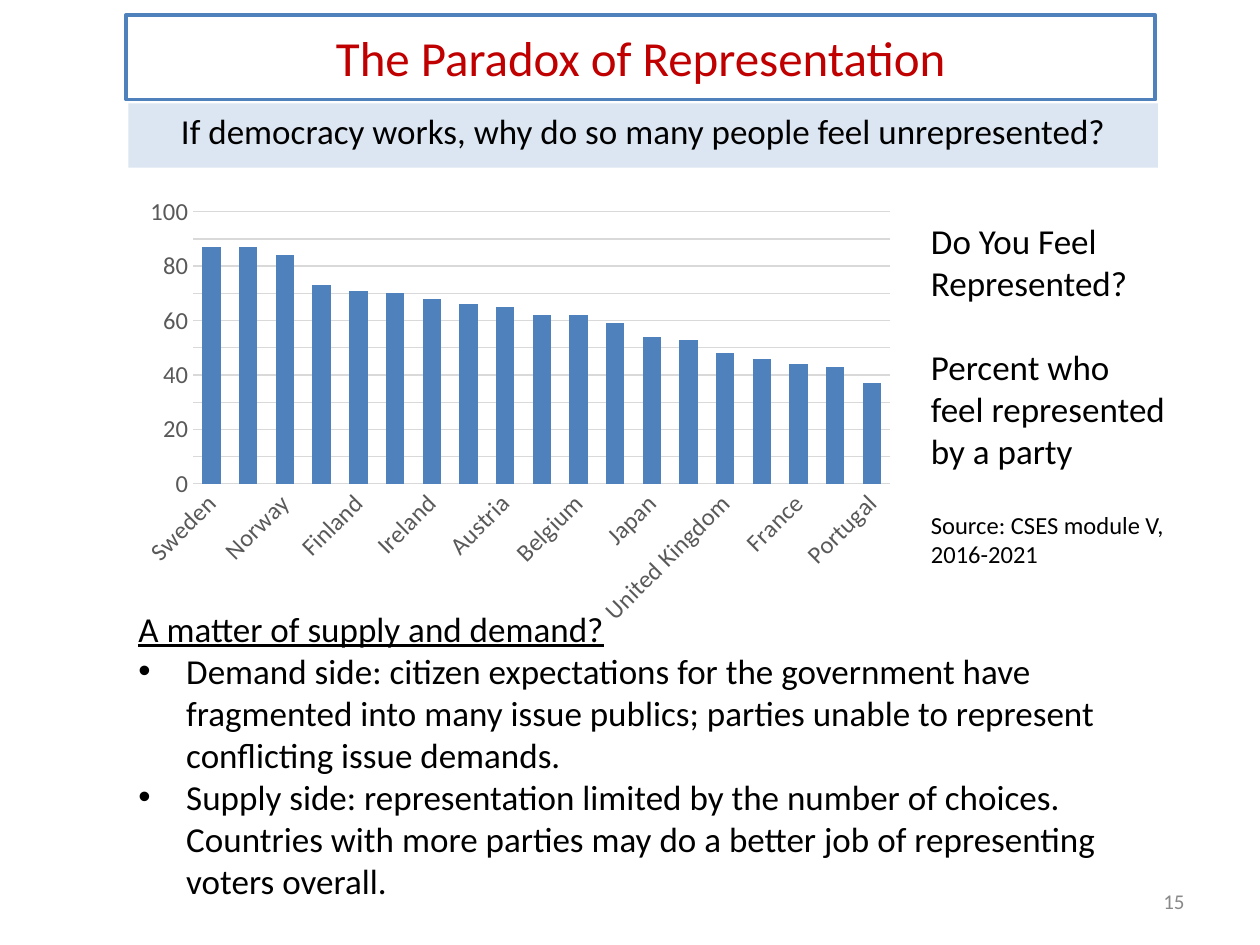
from lxml.etree import SubElement
from pptx import Presentation
from pptx.chart.data import CategoryChartData
from pptx.dml.color import RGBColor
from pptx.enum.chart import XL_CHART_TYPE, XL_TICK_MARK
from pptx.enum.shapes import MSO_SHAPE
from pptx.enum.text import MSO_ANCHOR, PP_ALIGN
from pptx.oxml.ns import qn
from pptx.util import Inches, Pt

# Content
TITLE = "The Paradox of Representation"
QUESTION = "If democracy works, why do so many people feel unrepresented?"
REPRESENTED = [
    ("Sweden", 87), ("New Zealand", 87), ("Norway", 84), ("Denmark", 73),
    ("Finland", 71), ("Canada", 70), ("Ireland", 68), ("Netherlands", 66),
    ("Austria", 65), ("United States", 62), ("Belgium", 62), ("Australia", 59),
    ("Japan", 54), ("Germany", 53), ("United Kingdom", 48), ("Italy", 46),
    ("France", 44), ("Greece", 43), ("Portugal", 37),
]
# Paragraphs: text, size, space before
CAPTION = [
    ("Do You Feel Represented?", 20, 0),
    ("Percent who feel represented by a party", 20, 24),
    ("Source: CSES module V, 2016-2021", 14, 22),
]
DISCUSSION = [
    ("A matter of supply and demand?", 20, 0),
    ("Demand side: citizen expectations for the government have fragmented into many "
     "issue publics; parties unable to represent conflicting issue demands.", 20, 0),
    ("Supply side: representation limited by the number of choices. Countries with more "
     "parties may do a better job of representing voters overall.", 20, 0),
]
PAGE_NUMBER = "15"

COLORS = {"blue": "4F81BD", "pale": "DCE6F2", "red": "C00000", "black": "000000",
          "axis": "595959", "grid": "D9D9D9", "number": "898989"}
FONT = "Calibri"

# Places in inches: left, top, width, height
PLACES = {
    "title": (1, 0.12, 8.17, 0.67),
    "question": (1.02, 0.82, 8.17, 0.51),
    "chart": (1.02, 1.49, 6.17, 3.55),
    "discussion": (1, 4.77, 8.33, 2.46),
    "caption": (7.29, 1.69, 2.08, 2.89),
    "number": (7.17, 6.95, 2.33, 0.4),
}


def color(name):
    return RGBColor.from_string(COLORS[name])


def place(name):
    return [Inches(length) for length in PLACES[name]]


def set_font(font, size, color_name):
    font.name = FONT
    font.size = Pt(size)
    font.color.rgb = color(color_name)


def write(shape, paragraphs, color_name="black", align=PP_ALIGN.LEFT, anchor=MSO_ANCHOR.TOP):
    frame = shape.text_frame
    frame.word_wrap = True
    frame.vertical_anchor = anchor
    frame.text = "\n".join(text for text, _, _ in paragraphs)
    for paragraph, (_, size, space) in zip(frame.paragraphs, paragraphs):
        paragraph.alignment = align
        if space:
            paragraph.space_before = Pt(space)
        set_font(paragraph.runs[0].font, size, color_name)
    return frame


def add_banner(slide, name):
    shape = slide.shapes.add_shape(MSO_SHAPE.RECTANGLE, *place(name))
    shape.shadow.inherit = False
    return shape


def add_bullet(paragraph, indent=0.38):
    properties = paragraph._p.get_or_add_pPr()
    properties.set("marL", str(Inches(indent)))
    properties.set("indent", str(-Inches(indent)))
    SubElement(properties, qn("a:buFont"), typeface="Arial")
    SubElement(properties, qn("a:buChar"), char="•")


def add_represented_chart(slide):
    data = CategoryChartData()
    data.categories = [country for country, _ in REPRESENTED]
    data.add_series("Series 1", [percent for _, percent in REPRESENTED])
    chart = slide.shapes.add_chart(XL_CHART_TYPE.COLUMN_CLUSTERED, *place("chart"), data).chart
    chart.has_legend = False
    chart.has_title = False
    set_font(chart.font, 10, "black")

    plot = chart.plots[0]
    plot.vary_by_categories = False
    plot.gap_width = 100
    plot.overlap = -27
    fill = plot.series[0].format.fill
    fill.solid()
    fill.fore_color.rgb = color("blue")

    countries, percents = chart.category_axis, chart.value_axis
    for axis in (countries, percents):
        axis.major_tick_mark = axis.minor_tick_mark = XL_TICK_MARK.NONE
        set_font(axis.tick_labels.font, 14, "axis")
    percents.minimum_scale, percents.maximum_scale = 0, 100
    percents.major_unit = 10
    percents.format.line.fill.background()
    for line in (countries.format.line, percents.major_gridlines.format.line):
        line.color.rgb = color("grid")
        line.width = Pt(0.75)
    # Slanted country names
    text_body = countries._element.find(qn("c:txPr")).find(qn("a:bodyPr"))
    text_body.set("rot", "-2700000")
    text_body.set("vert", "horz")


def main():
    presentation = Presentation()
    presentation.slide_width, presentation.slide_height = Inches(10), Inches(7.5)
    slide = presentation.slides.add_slide(presentation.slide_layouts[6])

    # Title and question banners
    title = add_banner(slide, "title")
    title.fill.background()
    title.line.color.rgb = color("blue")
    title.line.width = Pt(2.25)
    write(title, [(TITLE, 28, 0)], "red", PP_ALIGN.CENTER, MSO_ANCHOR.MIDDLE)

    question = add_banner(slide, "question")
    question.fill.solid()
    question.fill.fore_color.rgb = color("pale")
    question.line.fill.background()
    write(question, [(QUESTION, 20, 0)], align=PP_ALIGN.CENTER)

    # Page number
    number = slide.shapes.add_textbox(*place("number"))
    write(number, [(PAGE_NUMBER, 12, 0)], "number", PP_ALIGN.RIGHT, MSO_ANCHOR.MIDDLE)

    add_represented_chart(slide)

    # Discussion: underlined heading, then bullets
    discussion = write(slide.shapes.add_textbox(*place("discussion")), DISCUSSION)
    heading, *points = discussion.paragraphs
    heading.runs[0].font.underline = True
    for point in points:
        add_bullet(point)

    # Chart caption
    write(slide.shapes.add_textbox(*place("caption")), CAPTION)

    presentation.save("out.pptx")


if __name__ == "__main__":
    main()
